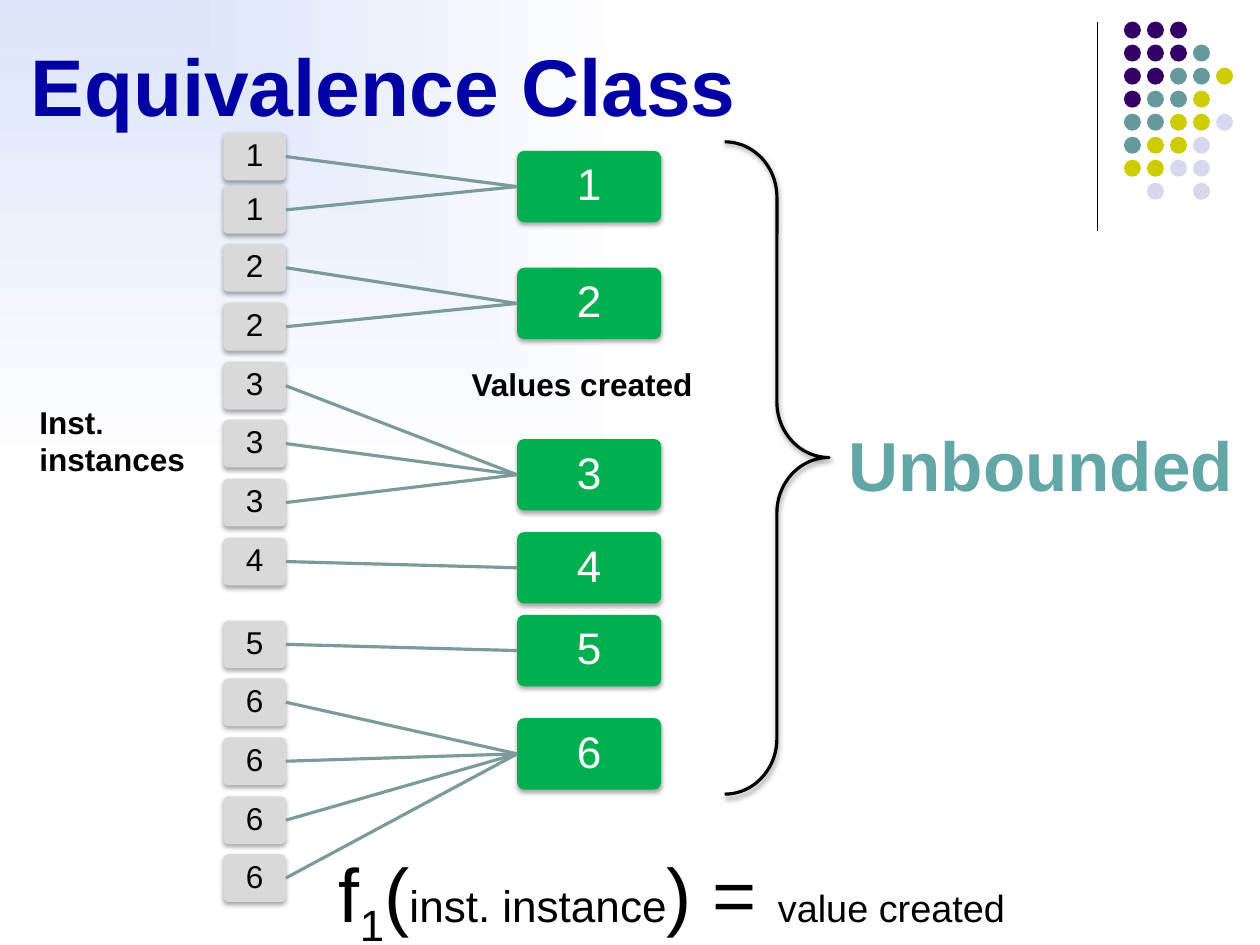
from dataclasses import dataclass

from lxml.etree import SubElement
from pptx import Presentation
from pptx.dml.color import RGBColor
from pptx.enum.shapes import MSO_CONNECTOR, MSO_SHAPE
from pptx.enum.text import MSO_ANCHOR, PP_ALIGN
from pptx.oxml.ns import qn
from pptx.shapes.autoshape import Shape
from pptx.shapes.connector import Connector
from pptx.slide import Slide
from pptx.text.text import TextFrame
from pptx.util import Inches, Pt

BLACK = RGBColor(0x00, 0x00, 0x00)
WHITE = RGBColor(0xFF, 0xFF, 0xFF)
PALE_BLUE = RGBColor(0xDB, 0xE4, 0xF9)
TITLE_BLUE = RGBColor(0x00, 0x00, 0xA4)
TEAL = RGBColor(0x62, 0xA6, 0xA6)
GREEN = RGBColor(0x00, 0xB0, 0x50)
GREY = RGBColor(0xD9, 0xD9, 0xD9)
LINK_GREY = RGBColor(0x7B, 0x9B, 0x9B)

DOT_COLORS = {
    "P": RGBColor(0x33, 0x00, 0x66),
    "T": RGBColor(0x66, 0x99, 0x99),
    "Y": RGBColor(0xCC, 0xCC, 0x00),
    "L": RGBColor(0xD8, 0xD8, 0xEC),
}
DOT_ROWS = ("PPP", "PPPT", "PPTTY", "PTTY", "TTYYL", "TYYL", "YYLL", " L L")
DOT_PITCH = 0.203


@dataclass(frozen=True)
class Span:
    text: str
    size: float
    color: RGBColor = BLACK
    bold: bool = False
    baseline: int = 0


@dataclass(frozen=True)
class Box:
    left: float
    top: float
    width: float
    height: float


@dataclass(frozen=True)
class EquivalenceClass:
    label: str
    value_top: float
    instance_tops: tuple[float, ...]


@dataclass(frozen=True)
class Caption:
    box: Box
    spans: tuple[Span, ...]
    align: PP_ALIGN = PP_ALIGN.LEFT


CLASSES = (
    EquivalenceClass("1", 1.33, (1.17, 1.64)),
    EquivalenceClass("2", 2.36, (2.15, 2.67)),
    EquivalenceClass("3", 3.87, (3.19, 3.70, 4.22)),
    EquivalenceClass("4", 4.69, (4.74,)),
    EquivalenceClass("5", 5.42, (5.47,)),
    EquivalenceClass("6", 6.33, (5.98, 6.50, 7.02, 7.53)),
)

CAPTIONS = (
    Caption(Box(7.14, 3.67, 4.08, 0.84), (Span("Unbounded", 44, TEAL, True),), PP_ALIGN.CENTER),
    Caption(Box(0.25, 3.5, 1.64, 0.77), (
        Span("Inst", 20, bold=True),
        Span(". ", 18, bold=True),
        Span("instances", 20, bold=True),
    )),
    Caption(Box(4.06, 3.17, 2.58, 0.44), (Span("Values created", 20, bold=True),)),
    Caption(Box(2.89, 7.42, 6.75, 0.91), (
        Span("f", 48),
        Span("1", 48, baseline=-25),
        Span("(", 48),
        Span("inst. instance", 28),
        Span(") = ", 48),
        Span("value created", 24),
    )),
)


def write(frame: TextFrame, spans: tuple[Span, ...], align: PP_ALIGN,
          spacing: float = 1.0, inset: float | None = None) -> None:
    frame.word_wrap = True
    if inset is not None:
        frame.margin_left = frame.margin_right = Inches(inset)
        frame.margin_top = frame.margin_bottom = Inches(inset)
    paragraph = frame.paragraphs[0]
    paragraph.alignment = align
    paragraph.line_spacing = spacing
    for span in spans:
        run = paragraph.add_run()
        run.text = span.text
        run.font.name = "Arial"
        run.font.size = Pt(span.size)
        run.font.bold = span.bold
        run.font.color.rgb = span.color
        if span.baseline:
            run.font._element.set("baseline", str(span.baseline * 1000))


def add_caption(slide: Slide, caption: Caption, spacing: float = 1.0,
                inset: float | None = None) -> None:
    box = caption.box
    textbox = slide.shapes.add_textbox(
        Inches(box.left), Inches(box.top), Inches(box.width), Inches(box.height))
    write(textbox.text_frame, caption.spans, caption.align, spacing, inset)


def add_plain_shape(slide: Slide, kind: MSO_SHAPE, box: Box, fill: RGBColor | None) -> Shape:
    shape = slide.shapes.add_shape(
        kind, Inches(box.left), Inches(box.top), Inches(box.width), Inches(box.height))
    shape.shadow.inherit = False
    shape.line.fill.background()
    if fill is None:
        shape.fill.background()
    else:
        shape.fill.solid()
        shape.fill.fore_color.rgb = fill
    return shape


def cast_shadow(shape: Shape, opacity: int, distance: float) -> None:
    effects = shape._element.spPr.find(qn("a:effectLst"))
    shadow = SubElement(effects, qn("a:outerShdw"), blurRad=str(Pt(3.1)),
                        dist=str(Pt(distance)), dir="5400000", rotWithShape="0")
    color = SubElement(shadow, qn("a:srgbClr"), val=str(BLACK))
    SubElement(color, qn("a:alpha"), val=str(opacity * 1000))


def add_node(slide: Slide, box: Box, fill: RGBColor, label: Span, inset: float) -> Shape:
    node = add_plain_shape(slide, MSO_SHAPE.ROUNDED_RECTANGLE, box, fill)
    node.adjustments[0] = 0.1
    cast_shadow(node, 35, 1.8)
    node.text_frame.vertical_anchor = MSO_ANCHOR.MIDDLE
    write(node.text_frame, (label,), PP_ALIGN.CENTER, 0.9, inset)
    return node


def add_line(slide: Slide, start: tuple[float, float], end: tuple[float, float],
             color: RGBColor, width: float) -> Connector:
    line = slide.shapes.add_connector(
        MSO_CONNECTOR.STRAIGHT, *map(Inches, start), *map(Inches, end))
    line.line.color.rgb = color
    line.line.width = Pt(width)
    SubElement(line._element.spPr, qn("a:effectLst"))
    return line


def paint_background(slide: Slide) -> None:
    fill = slide.background.fill
    fill.gradient()
    for stop, color in zip(fill.gradient_stops, (PALE_BLUE, WHITE)):
        stop.color.rgb = color
    linear = slide.element.find(".//" + qn("a:lin"))
    gradient = linear.getparent()
    gradient.remove(linear)
    corner = SubElement(gradient, qn("a:path"), path="rect")
    SubElement(corner, qn("a:fillToRect"), r="100000", b="100000")


def add_class(slide: Slide, group: EquivalenceClass) -> None:
    value = add_node(slide, Box(4.56, group.value_top, 1.27, 0.63), GREEN,
                     Span(group.label, 28, WHITE), 0.02)
    for top in group.instance_tops:
        instance = add_node(slide, Box(1.97, top, 0.55, 0.42), GREY,
                            Span(group.label, 20), 0.01)
        link = add_line(slide, (4.56, group.value_top), (2.52, top), LINK_GREY, 2)
        link.begin_connect(value, 1)
        link.end_connect(instance, 3)


def main() -> None:
    deck = Presentation()
    deck.slide_width, deck.slide_height = Inches(11.11), Inches(8.33)
    slide = deck.slides.add_slide(deck.slide_layouts[6])
    paint_background(slide)

    # Corner decoration
    add_line(slide, (9.68, 0.19), (9.68, 2.04), BLACK, 0.75)
    for row, dots in enumerate(DOT_ROWS):
        for column, dot in enumerate(dots):
            if dot in DOT_COLORS:
                box = Box(9.91 + column * DOT_PITCH, 0.19 + row * DOT_PITCH, 0.15, 0.15)
                add_plain_shape(slide, MSO_SHAPE.OVAL, box, DOT_COLORS[dot])

    # Title
    title = Caption(Box(0.27, 0.38, 10.57, 0.95),
                    (Span("Equivalence Class", 51, TITLE_BLUE, True),))
    add_caption(slide, title, 0.95, 0)

    # Instances linked to the values they create
    for group in CLASSES:
        add_class(slide, group)

    # Brace around all values
    brace = add_plain_shape(slide, MSO_SHAPE.RIGHT_BRACE, Box(6.39, 1.25, 0.92, 5.75), None)
    brace.adjustments[0], brace.adjustments[1] = 0.531, 0.484
    brace.line.color.rgb = BLACK
    brace.line.width = Pt(2)
    cast_shadow(brace, 38, 1.6)

    # Captions and formula
    for caption in CAPTIONS:
        add_caption(slide, caption)

    deck.save("out.pptx")


if __name__ == "__main__":
    main()
